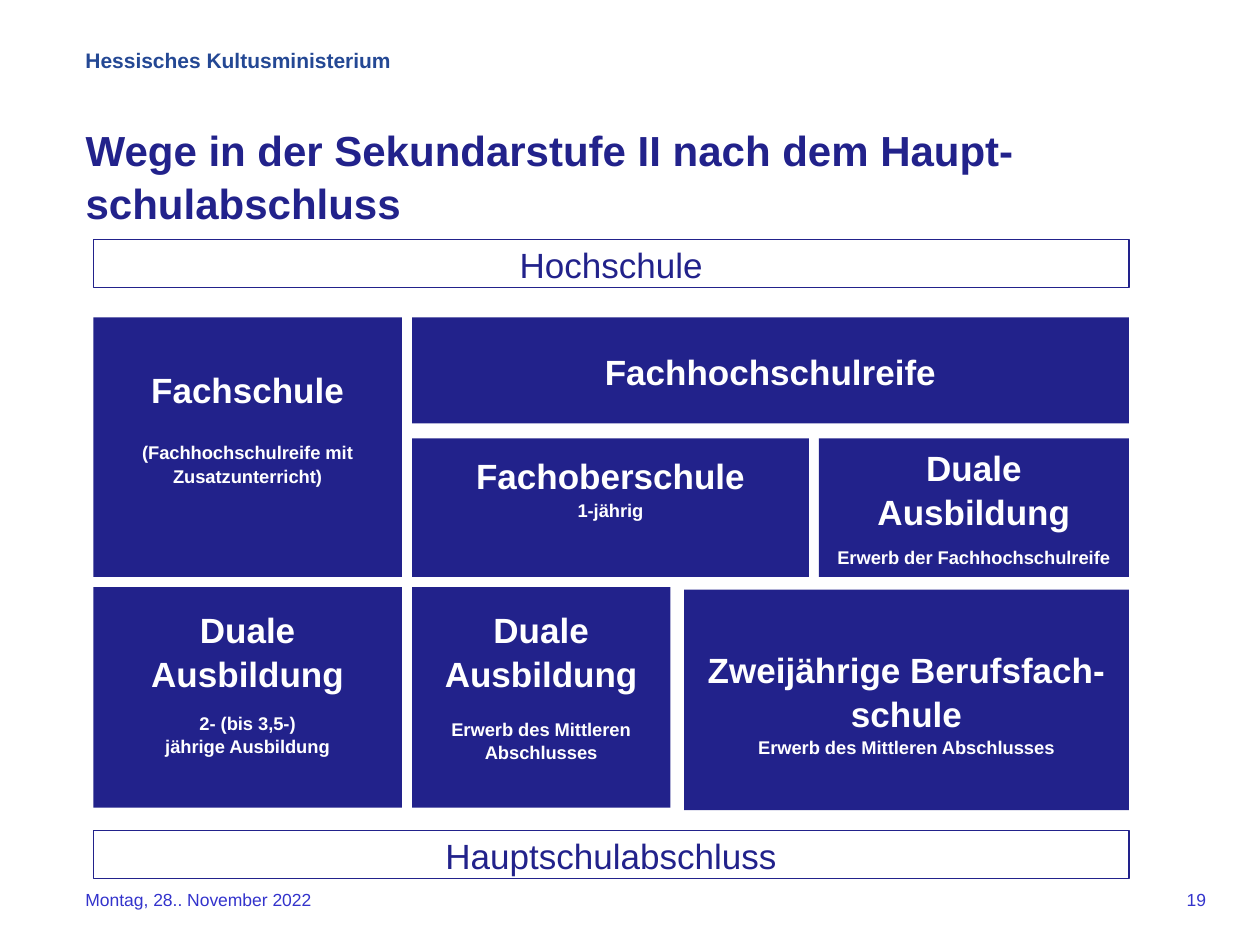
from dataclasses import dataclass

from pptx import Presentation
from pptx.dml.color import RGBColor
from pptx.enum.shapes import MSO_SHAPE
from pptx.enum.text import MSO_ANCHOR, MSO_AUTO_SIZE, PP_ALIGN
from pptx.util import Inches, Pt

NAVY = RGBColor(0x22, 0x22, 0x8B)
HEADER_BLUE = RGBColor(0x24, 0x48, 0x94)
FOOTER_BLUE = RGBColor(0x33, 0x33, 0xCC)
WHITE = RGBColor(0xFF, 0xFF, 0xFF)

FONT = "Arial"
LINE_SPACING = 1.05
MARGIN = 0.58
LEFT, MIDDLE, RIGHT = 0.74, 3.27, 8.96
TOP_ROW, SCHOOL_ROW, TRAINING_ROW = 2.52, 3.48, 4.66
LEFT_WIDTH = 2.45
SCHOOL_HEIGHT = 1.1
TRAINING_HEIGHT = 1.75


@dataclass(frozen=True)
class Pathway:
    """A filled box: heading, then detail lines set `gap` points below it."""
    heading: str
    left: float
    top: float
    width: float
    height: float
    details: tuple[str, ...] = ()
    gap: float = 0
    inset_top: float = 0.05
    anchor: MSO_ANCHOR = MSO_ANCHOR.TOP


@dataclass(frozen=True)
class Level:
    """An outlined bar across the full width."""
    name: str
    top: float


PATHWAYS = (
    Pathway("Fachschule", LEFT, TOP_ROW, LEFT_WIDTH, 2.06,
            ("(Fachhochschulreife mit Zusatzunterricht)",), gap=17, inset_top=0.39),
    Pathway("Fachhochschulreife", MIDDLE, TOP_ROW, RIGHT - MIDDLE, 0.84,
            anchor=MSO_ANCHOR.MIDDLE),
    Pathway("Fachoberschule", MIDDLE, SCHOOL_ROW, 3.15, SCHOOL_HEIGHT,
            ("1-jährig",), gap=1, inset_top=0.11),
    Pathway("Duale Ausbildung", 6.5, SCHOOL_ROW, RIGHT - 6.5, SCHOOL_HEIGHT,
            ("Erwerb der Fachhochschulreife",), gap=7),
    Pathway("Duale Ausbildung", LEFT, TRAINING_ROW, LEFT_WIDTH, TRAINING_HEIGHT,
            ("2- (bis 3,5-)", "jährige Ausbildung"), gap=9.5, inset_top=0.15),
    Pathway("Duale Ausbildung", MIDDLE, TRAINING_ROW, 2.05, TRAINING_HEIGHT,
            ("Erwerb des Mittleren Abschlusses",), gap=13, inset_top=0.15),
    Pathway("Zweijährige Berufsfach-schule", 5.43, 4.68, RIGHT - 5.43, TRAINING_HEIGHT,
            ("Erwerb des Mittleren Abschlusses",), inset_top=0.45),
)
LEVELS = (Level("Hochschule", 1.9), Level("Hauptschulabschluss", 6.59))


def write(paragraph, text: str, *, size: float, color: RGBColor, bold: bool = False,
          align: PP_ALIGN = PP_ALIGN.LEFT, space_before: float = 0) -> None:
    paragraph.alignment = align
    paragraph.line_spacing = LINE_SPACING
    paragraph.space_before = Pt(space_before)
    run = paragraph.add_run()
    run.text = text
    run.font.name = FONT
    run.font.size = Pt(size)
    run.font.bold = bold
    run.font.color.rgb = color


def prepare_frame(shape, anchor: MSO_ANCHOR = MSO_ANCHOR.TOP, inset_top: float = 0.05):
    """Set wrapping, anchor and margins, and return the text frame."""
    frame = shape.text_frame
    frame.word_wrap = True
    frame.auto_size = MSO_AUTO_SIZE.NONE
    frame.vertical_anchor = anchor
    frame.margin_left = frame.margin_right = Inches(0.1)
    frame.margin_top = Inches(inset_top)
    frame.margin_bottom = Inches(0.05)
    return frame


def add_rectangle(slide, left: float, top: float, width: float, height: float,
                  fill: RGBColor):
    shape = slide.shapes.add_shape(MSO_SHAPE.RECTANGLE, Inches(left), Inches(top),
                                   Inches(width), Inches(height))
    shape.shadow.inherit = False
    shape.fill.solid()
    shape.fill.fore_color.rgb = fill
    return shape


def add_pathway(slide, pathway: Pathway) -> None:
    shape = add_rectangle(slide, pathway.left, pathway.top, pathway.width,
                          pathway.height, NAVY)
    shape.line.fill.background()
    frame = prepare_frame(shape, pathway.anchor, pathway.inset_top)
    write(frame.paragraphs[0], pathway.heading, size=20, color=WHITE, bold=True,
          align=PP_ALIGN.CENTER)
    for index, detail in enumerate(pathway.details):
        write(frame.add_paragraph(), detail, size=10.5, color=WHITE, bold=True,
              align=PP_ALIGN.CENTER, space_before=0 if index else pathway.gap)


def add_level(slide, level: Level) -> None:
    shape = add_rectangle(slide, LEFT, level.top, RIGHT - LEFT, 0.38, WHITE)
    shape.line.color.rgb = NAVY
    shape.line.width = Pt(0.75)
    frame = prepare_frame(shape, MSO_ANCHOR.MIDDLE)
    write(frame.paragraphs[0], level.name, size=20, color=NAVY, align=PP_ALIGN.CENTER)


def add_label(slide, text: str, left: float, top: float, width: float, height: float,
              **text_format) -> None:
    box = slide.shapes.add_textbox(Inches(left), Inches(top), Inches(width), Inches(height))
    write(prepare_frame(box).paragraphs[0], text, **text_format)


def add_title(slide, text: str) -> None:
    title = slide.shapes.title
    title.left, title.top = Inches(MARGIN), Inches(0.92)
    title.width, title.height = Inches(8.5), Inches(1.25)
    write(prepare_frame(title).paragraphs[0], text, size=24, color=NAVY, bold=True)


def main() -> None:
    presentation = Presentation()
    presentation.slide_width = Inches(10)
    presentation.slide_height = Inches(7.5)
    slide = presentation.slides.add_slide(presentation.slide_layouts[5])

    add_label(slide, "Hessisches Kultusministerium", MARGIN, 0.32, 3.17, 0.5,
              size=12, color=HEADER_BLUE, bold=True)
    add_title(slide, "Wege in der Sekundarstufe II nach dem Haupt-schulabschluss")
    for pathway in PATHWAYS:
        add_pathway(slide, pathway)
    for level in LEVELS:
        add_level(slide, level)
    add_label(slide, "Montag, 28.. November 2022", MARGIN, 7, 3.22, 0.42,
              size=10, color=FOOTER_BLUE)
    add_label(slide, "19", 7.17, 7, 2.5, 0.33,
              size=10, color=FOOTER_BLUE, align=PP_ALIGN.RIGHT)
    presentation.save("out.pptx")


if __name__ == "__main__":
    main()
